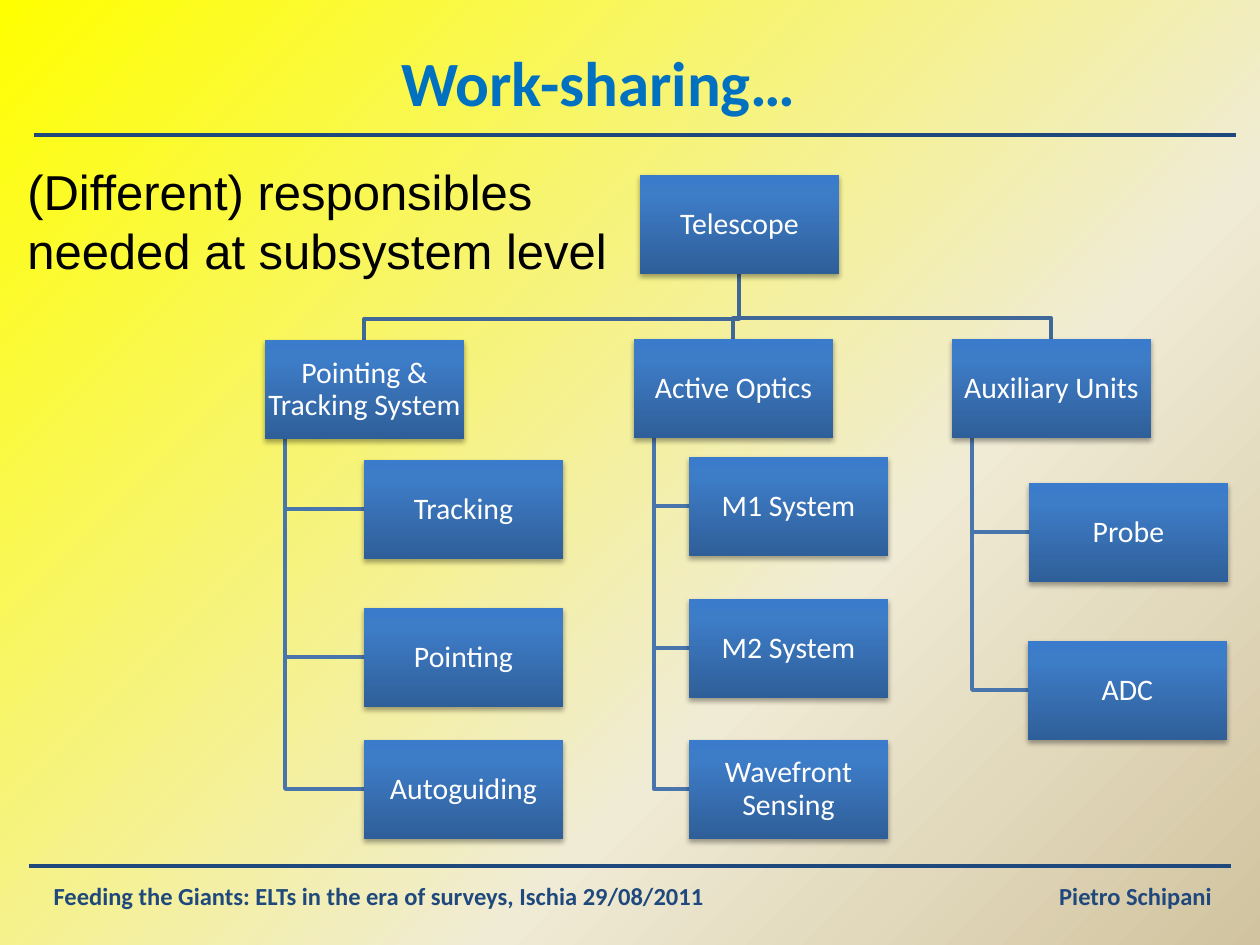
from dataclasses import dataclass

from lxml import etree
from pptx import Presentation
from pptx.dml.color import RGBColor
from pptx.enum.shapes import MSO_CONNECTOR, MSO_SHAPE
from pptx.enum.text import MSO_ANCHOR, PP_ALIGN
from pptx.oxml.ns import qn
from pptx.util import Pt

RECTANGLE = MSO_SHAPE.RECTANGLE
STRAIGHT = MSO_CONNECTOR.STRAIGHT
TOP, MIDDLE = MSO_ANCHOR.TOP, MSO_ANCHOR.MIDDLE
LEFT, CENTER = PP_ALIGN.LEFT, PP_ALIGN.CENTER
EMU_PER_PX = 914400 / 126
BOX_WIDTH, BOX_HEIGHT = 199, 99
TRUNK_INSET = 20
RAIL_GAP = 21

ROOT = ("Telescope", 640, 175)
BRANCHES = [
    (("Pointing & Tracking System", 265, 340),
     [("Tracking", 364, 460), ("Pointing", 364, 608), ("Autoguiding", 364, 740)]),
    (("Active Optics", 634, 339),
     [("M1 System", 689, 457), ("M2 System", 689, 599), ("Wavefront Sensing", 689, 740)]),
    (("Auxiliary Units", 952, 339),
     [("Probe", 1029, 483), ("ADC", 1028, 641)]),
]


@dataclass(frozen=True)
class Theme:
    heading_font: str = "Calibri"
    body_font: str = "Arial"
    title: str = "0070C0"
    navy: str = "1F497D"
    black: str = "000000"
    white: str = "FFFFFF"
    branch_line: str = "3F6797"
    leaf_line: str = "4875AC"
    background: tuple = ((0, "FFFF00"), (65, "F0EBD5"), (100, "D1C39F"))
    box: tuple = ((0, "2F5F99"), (80, "3D7CC7"), (100, "3A7CCB"))
    title_size: int = 36
    note_size: int = 28
    box_size: int = 17
    footer_size: int = 14
    line_width: int = 2


def px(value):
    return round(value * EMU_PER_PX)


class SlideBuilder:
    def __init__(self, slide, theme):
        self.slide = slide
        self.theme = theme

    def gradient(self, fill, element, stops, angle):
        fill.gradient()
        gradient = next(element.iter(qn("a:gradFill")))
        stop_list = gradient.find(qn("a:gsLst"))
        for stop in list(stop_list):
            stop_list.remove(stop)
        for position, color in stops:
            stop = etree.SubElement(stop_list, qn("a:gs"), pos=str(position * 1000))
            etree.SubElement(stop, qn("a:srgbClr"), val=color)
        gradient.find(qn("a:lin")).set("ang", str(angle * 60000))

    def background(self):
        self.gradient(self.slide.background.fill, self.slide.element,
                      self.theme.background, 45)

    def label(self, shape, text, size, color, font, bold=False, align=CENTER, anchor=MIDDLE):
        frame = shape.text_frame
        frame.word_wrap = True
        frame.vertical_anchor = anchor
        paragraph = frame.paragraphs[0]
        paragraph.alignment = align
        run = paragraph.add_run()
        run.text = text
        run.font.name = font
        run.font.size = Pt(size)
        run.font.bold = bold
        run.font.color.rgb = RGBColor.from_string(color)

    def text(self, bounds, text, size, color, font, **options):
        shape = self.slide.shapes.add_textbox(*map(px, bounds))
        self.label(shape, text, size, color, font, **options)

    def stroke(self, line, color):
        line.color.rgb = RGBColor.from_string(color)
        line.width = Pt(self.theme.line_width)

    def rule(self, left, right, y):
        connector = self.slide.shapes.add_connector(
            STRAIGHT, px(left), px(y), px(right), px(y))
        self.stroke(connector.line, self.theme.navy)
        etree.SubElement(connector.element.spPr, qn("a:effectLst"))

    def polyline(self, points, color):
        builder = self.slide.shapes.build_freeform(*points[0], scale=EMU_PER_PX)
        builder.add_line_segments(points[1:], close=False)
        shape = builder.convert_to_shape()
        shape.fill.background()
        shape.shadow.inherit = False
        self.stroke(shape.line, color)

    def branch_link(self, root, branch):
        start = root[1] + BOX_WIDTH // 2
        end = branch[1] + BOX_WIDTH // 2
        rail = branch[2] - RAIL_GAP
        self.polyline([(start, root[2] + BOX_HEIGHT), (start, rail), (end, rail),
                       (end, branch[2])], self.theme.branch_line)

    def leaf_link(self, branch, leaf):
        trunk = branch[1] + TRUNK_INSET
        middle = leaf[2] + BOX_HEIGHT // 2
        self.polyline([(trunk, branch[2] + BOX_HEIGHT), (trunk, middle),
                       (leaf[1], middle)], self.theme.leaf_line)

    def box(self, name, left, top):
        shape = self.slide.shapes.add_shape(
            RECTANGLE, px(left), px(top), px(BOX_WIDTH), px(BOX_HEIGHT))
        self.gradient(shape.fill, shape.element, self.theme.box, 270)
        shape.line.fill.background()
        shape.shadow.inherit = False
        effects = shape.element.spPr.find(qn("a:effectLst"))
        shadow = etree.SubElement(effects, qn("a:outerShdw"), blurRad=str(Pt(3.1)),
                                  dist=str(Pt(1.8)), dir="5400000", rotWithShape="0")
        color = etree.SubElement(shadow, qn("a:srgbClr"), val=self.theme.black)
        etree.SubElement(color, qn("a:alpha"), val="35000")
        self.label(shape, name, self.theme.box_size, self.theme.white,
                   self.theme.heading_font)
        frame = shape.text_frame
        frame.margin_left = frame.margin_right = px(1)
        frame.margin_top = frame.margin_bottom = px(1)
        frame.paragraphs[0].line_spacing = 0.9

    def chart(self, root, branches):
        for branch, leaves in branches:
            self.branch_link(root, branch)
            for leaf in leaves:
                self.leaf_link(branch, leaf)
        self.box(*root)
        for branch, leaves in branches:
            for node in [branch, *leaves]:
                self.box(*node)


def main():
    presentation = Presentation()
    presentation.slide_width = px(1260)
    presentation.slide_height = px(945)
    slide = presentation.slides.add_slide(presentation.slide_layouts[6])
    theme = Theme()
    builder = SlideBuilder(slide, theme)

    builder.background()
    builder.rule(34, 1236, 135)
    builder.rule(29, 1231, 866)
    footers = [
        ((0, 869, 758, 53), "Feeding the Giants: ELTs in the era of surveys, Ischia 29/08/2011"),
        ((1037, 869, 197, 53), "Pietro Schipani"),
    ]
    for bounds, text in footers:
        builder.text(bounds, text, theme.footer_size, theme.navy,
                     theme.heading_font, bold=True)
    builder.chart(ROOT, BRANCHES)
    builder.text((0, 38, 1197, 87), "Work-sharing…", theme.title_size,
                 theme.title, theme.heading_font, bold=True)
    builder.text((15, 155, 645, 131), "(Different) responsibles needed at subsystem level",
                 theme.note_size, theme.black, theme.body_font, align=LEFT, anchor=TOP)
    presentation.save("out.pptx")


if __name__ == "__main__":
    main()
